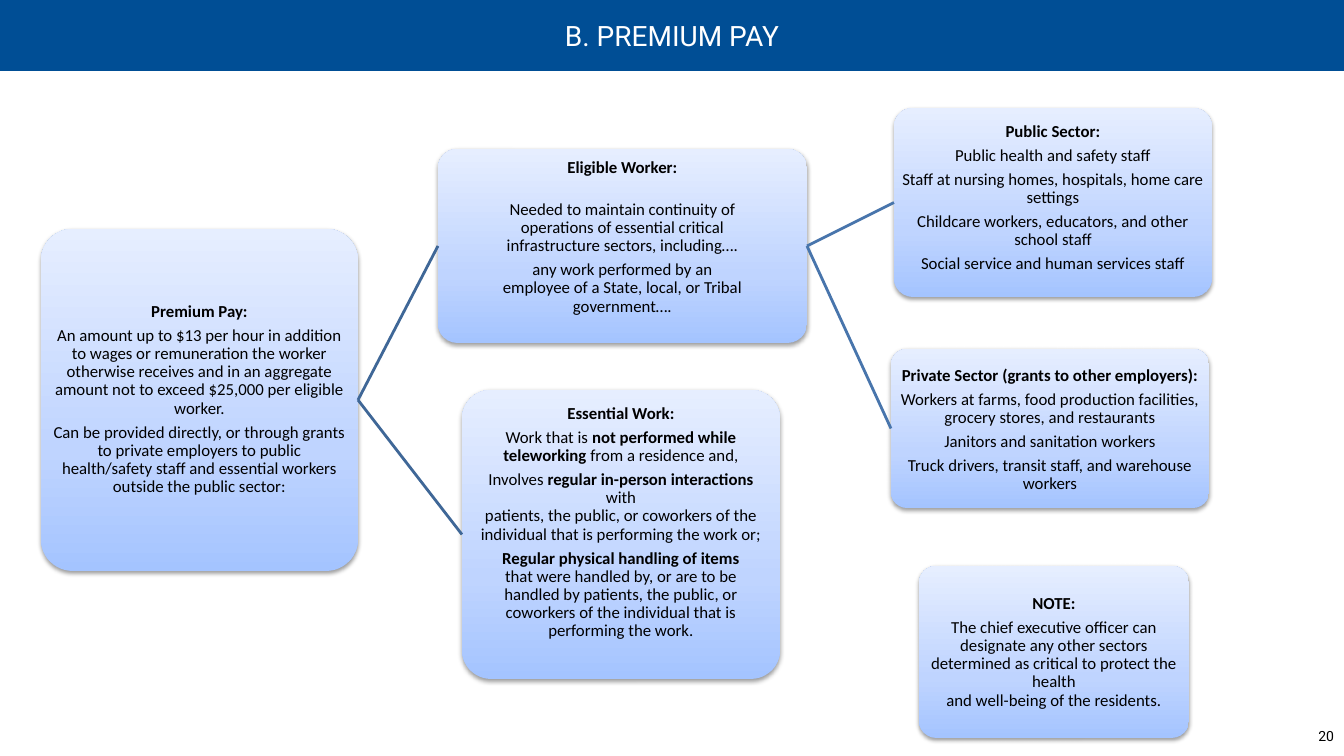
from copy import deepcopy

from lxml.etree import SubElement
from pptx import Presentation
from pptx.dml.color import RGBColor
from pptx.enum.shapes import MSO_CONNECTOR as CONNECTOR, MSO_SHAPE as SHAPE
from pptx.enum.text import MSO_ANCHOR as ANCHOR, PP_ALIGN as ALIGN
from pptx.oxml.ns import qn
from pptx.util import Pt

PX = 914400 / 100.8
COLORS = {
    "banner": "004E95", "white": "FFFFFF", "black": "000000",
    "box_bottom": "A4C4FF", "box_middle": "BFD4FF", "box_top": "E6EEFF",
    "first_link": "3F6797", "second_link": "4875AC",
}
GRADIENT = [(0, "box_bottom"), (0.35, "box_middle"), (1, "box_top")]
SHADOW = {"blurRad": "40000", "dist": "20000", "dir": "5400000", "rotWithShape": "0"}
CORNER = 0.1
HEADING_GAP = {"eligible": 17}  # points below the heading, where wider than usual

# name: (left, top, width, height), top of the first line, paragraphs (** marks bold)
BOXES = {
    "premium": ((41, 229, 317, 342), 303, [
        "**Premium Pay:**",
        "An amount up to $13 per hour in addition to wages or remuneration the worker "
        "otherwise receives and in an aggregate amount not to exceed $25,000 per "
        "eligible worker.",
        "Can be provided directly, or through grants to private employers to public "
        "health/safety staff and essential workers outside the public sector:",
    ]),
    "eligible": ((438, 149, 369, 194), 159, [
        "**Eligible Worker:**",
        "Needed to maintain continuity of\noperations of essential critical\n"
        "infrastructure sectors, including….",
        "any work performed by an\nemployee of a State, local, or Tribal\ngovernment….",
    ]),
    "public": ((894, 108, 318, 189), 123, [
        "**Public Sector:**",
        "Public health and safety staff",
        "Staff at nursing homes, hospitals, home care settings",
        "Childcare workers, educators, and other school staff",
        "Social service and human services staff",
    ]),
    "private": ((891, 349, 318, 159), 367, [
        "**Private Sector (grants to other employers):**",
        "Workers at farms, food production facilities, grocery stores, and restaurants",
        "Janitors and sanitation workers",
        "Truck drivers, transit staff, and warehouse workers",
    ]),
    "essential": ((462, 390, 318, 289), 405, [
        "**Essential Work:**",
        "Work that is **not performed while\nteleworking** from a residence and,",
        "Involves **regular in-person interactions **with\npatients, the public, or "
        "coworkers of the\nindividual that is performing the work or;",
        "**Regular physical handling of items\n**that were handled by, or are to be\n"
        "handled by patients, the public, or\ncoworkers of the individual that is\n"
        "performing the work.",
    ]),
    "note": ((919, 566, 270, 172), 595, [
        "**NOTE:**",
        "The chief executive officer can designate any other sectors determined as "
        "critical to protect the health\nand well-being of the residents.",
    ]),
}
LINKS = [
    ("premium", "eligible", "first_link"),
    ("premium", "essential", "first_link"),
    ("eligible", "public", "second_link"),
    ("eligible", "private", "second_link"),
]


def px(*lengths):
    return [round(length * PX) for length in lengths]


def write(paragraph, text, font, size, color, **layout):
    """Fill a paragraph; ** toggles bold and a newline breaks the line."""
    for name, value in layout.items():
        setattr(paragraph, name, value)
    for part_number, part in enumerate(text.split("**")):
        for line_number, line in enumerate(part.split("\n")):
            if line_number:
                paragraph.add_line_break()
            if line:
                run = paragraph.add_run()
                run.text = line
                run.font.color.rgb = RGBColor.from_string(COLORS[color])
                style = {"name": font, "size": Pt(size), "bold": part_number % 2 == 1}
                for name, value in style.items():
                    setattr(run.font, name, value)


presentation = Presentation()
presentation.slide_width, presentation.slide_height = px(1344, 756)
slide = presentation.slides.add_slide(presentation.slide_layouts[6])
shapes = slide.shapes

banner = shapes.add_shape(SHAPE.RECTANGLE, *px(0, 0, 1344, 71))
banner.shadow.inherit = False
banner.fill.solid()
banner.fill.fore_color.rgb = RGBColor.from_string(COLORS["banner"])
banner.line.fill.background()
banner.text_frame.vertical_anchor = ANCHOR.MIDDLE
write(banner.text_frame.paragraphs[0], "B. PREMIUM PAY", "Roboto", 20, "white",
      alignment=ALIGN.CENTER)

boxes = {}
for box_name, (bounds, text_top, paragraphs) in BOXES.items():
    left, top, width, height = bounds
    box = boxes[box_name] = shapes.add_shape(SHAPE.ROUNDED_RECTANGLE, *px(*bounds))
    box.adjustments[0] = CORNER
    box.line.fill.background()

    box.fill.gradient()
    box.fill.gradient_angle = 90
    properties = box._element.spPr
    stop_list = properties.find(".//" + qn("a:gsLst"))
    stop_list.insert(1, deepcopy(stop_list[0]))
    for stop, (position, color) in zip(box.fill.gradient_stops, GRADIENT):
        stop.position = position
        stop.color.rgb = RGBColor.from_string(COLORS[color])

    box.shadow.inherit = False
    shadow = SubElement(properties.find(qn("a:effectLst")), qn("a:outerShdw"), SHADOW)
    shadow_color = SubElement(shadow, qn("a:srgbClr"), val=COLORS["black"])
    SubElement(shadow_color, qn("a:alpha"), val="38000")

    # A rounded rectangle already insets its text by 0.29 of the corner radius.
    corner_inset = 0.29 * CORNER * min(width, height)
    frame = box.text_frame
    frame.word_wrap = True
    frame.vertical_anchor = ANCHOR.TOP
    frame.margin_left, frame.margin_right, frame.margin_bottom = px(1, 1, 1)
    frame.margin_top, = px(text_top - top - corner_inset)
    for number, text in enumerate(paragraphs):
        paragraph = frame.add_paragraph() if number else frame.paragraphs[0]
        gap = 4.2 if number else HEADING_GAP.get(box_name, 4.2)
        write(paragraph, text, "Calibri", 12, "black", alignment=ALIGN.CENTER,
              line_spacing=0.9, space_after=Pt(gap))

for start, end, color in LINKS:
    link = shapes.add_connector(CONNECTOR.STRAIGHT, 0, 0, 0, 0)
    link.begin_connect(boxes[start], 3)
    link.end_connect(boxes[end], 1)
    link.line.width = Pt(2)
    link.line.color.rgb = RGBColor.from_string(COLORS[color])
    SubElement(link._element.spPr, qn("a:effectLst"))

page_number = shapes.add_textbox(*px(1030, 723, 314, 32))
page_number.text_frame.word_wrap = True
write(page_number.text_frame.paragraphs[0], "20", "Roboto", 10, "black",
      alignment=ALIGN.RIGHT)

presentation.save("out.pptx")
